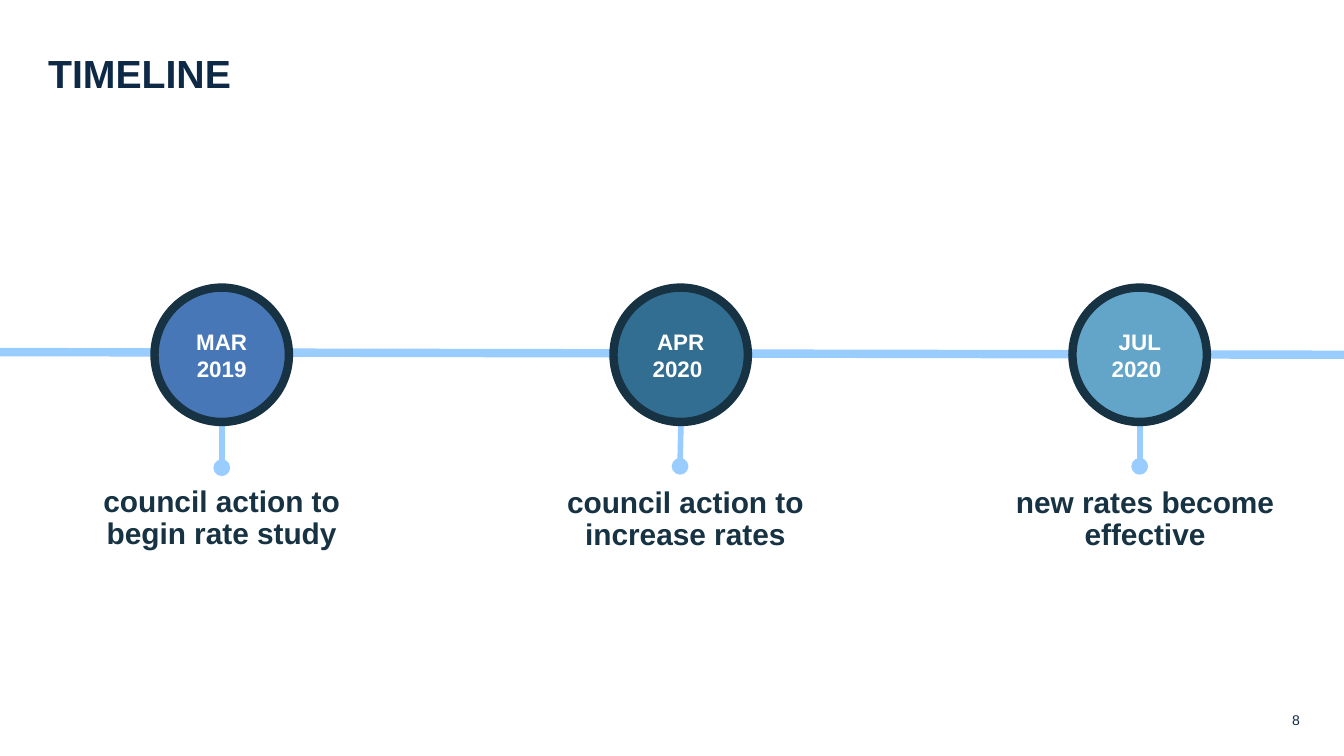
from lxml import etree
from pptx import Presentation
from pptx.dml.color import RGBColor
from pptx.enum.shapes import MSO_CONNECTOR, MSO_SHAPE
from pptx.enum.text import MSO_ANCHOR, PP_ALIGN
from pptx.oxml.ns import qn
from pptx.util import Inches, Pt

NAVY, DARK, SKY, WHITE = "0E2945", "173343", "99CCFF", "FFFFFF"
TITLE = "TIMELINE"
PAGE_NUMBER = "8"
# date, caption, circle fill, caption (left, top, width, height), stem bottom and top
MILESTONES = [
    ("MAR\n2019", "council action to begin rate study", "4777B7",
     (0.57, 3.57, 2.16, 0.83), (1.65, 3.48), (1.65, 3.03)),
    ("APR 2020 ", "council action to increase rates", "326E91",
     (4.02, 3.58, 2.16, 0.59), (5.06, 3.47), (5.07, 2.99)),
    ("JUL 2020 ", "new rates become effective", "63A4C9",
     (7.44, 3.58, 2.16, 0.59), (8.48, 3.47), (8.48, 2.99)),
]
FIRST_LEFT, STEP = 1.15, 3.415
CIRCLE_TOP, CIRCLE_SIZE = 2.14, 1


def rgb(color):
    return RGBColor.from_string(color)


def write(frame, text, size, color, bold=False, align=PP_ALIGN.LEFT,
          anchor=MSO_ANCHOR.TOP, spacing=None):
    frame.word_wrap = True
    frame.vertical_anchor = anchor
    frame.text = text
    for paragraph in frame.paragraphs:
        paragraph.alignment = align
        paragraph.line_spacing = spacing
        font = paragraph.runs[0].font
        font.name, font.size, font.bold = "Arial", Pt(size), bold
        font.color.rgb = rgb(color)


def add_label(slide, box, text, size, color, **text_format):
    label = slide.shapes.add_textbox(*map(Inches, box))
    write(label.text_frame, text, size, color, **text_format)


def add_line(slide, start, end, width, oval_start=False):
    line = slide.shapes.add_connector(
        MSO_CONNECTOR.STRAIGHT, *map(Inches, (*start, *end)))
    line.line.color.rgb = rgb(SKY)
    line.line.width = Pt(width)
    if oval_start:
        outline = line._element.spPr.find(qn("a:ln"))
        etree.SubElement(outline, qn("a:headEnd"), type="oval")
    etree.SubElement(line._element.spPr, qn("a:effectLst"))


def add_milestone(slide, left, date, caption, fill, caption_box, stem_bottom, stem_top):
    add_line(slide, stem_bottom, stem_top, 3, oval_start=True)
    circle = slide.shapes.add_shape(
        MSO_SHAPE.OVAL, Inches(left), Inches(CIRCLE_TOP),
        Inches(CIRCLE_SIZE), Inches(CIRCLE_SIZE))
    circle.shadow.inherit = False
    circle.fill.solid()
    circle.fill.fore_color.rgb = rgb(fill)
    circle.line.color.rgb = rgb(DARK)
    circle.line.width = Pt(4.5)
    write(circle.text_frame, date, 12, WHITE, bold=True,
          align=PP_ALIGN.CENTER, anchor=MSO_ANCHOR.MIDDLE)
    add_label(slide, caption_box, caption, 16, DARK, bold=True,
              align=PP_ALIGN.CENTER, spacing=0.9)


def main():
    deck = Presentation()
    deck.slide_width = Inches(10)
    deck.slide_height = deck.slide_width * 9 // 16
    slide = deck.slides.add_slide(deck.slide_layouts[6])

    add_line(slide, (0, 2.62), (10, 2.64), 4.5)
    add_label(slide, (0.26, 0.32, 8.02, 0.45), TITLE, 21, NAVY, bold=True)
    add_label(slide, (7.52, 5.26, 2.25, 0.2), PAGE_NUMBER, 7.5, NAVY,
              align=PP_ALIGN.RIGHT, anchor=MSO_ANCHOR.MIDDLE)
    for index, milestone in enumerate(MILESTONES):
        add_milestone(slide, FIRST_LEFT + index * STEP, *milestone)

    deck.save("out.pptx")


if __name__ == "__main__":
    main()
